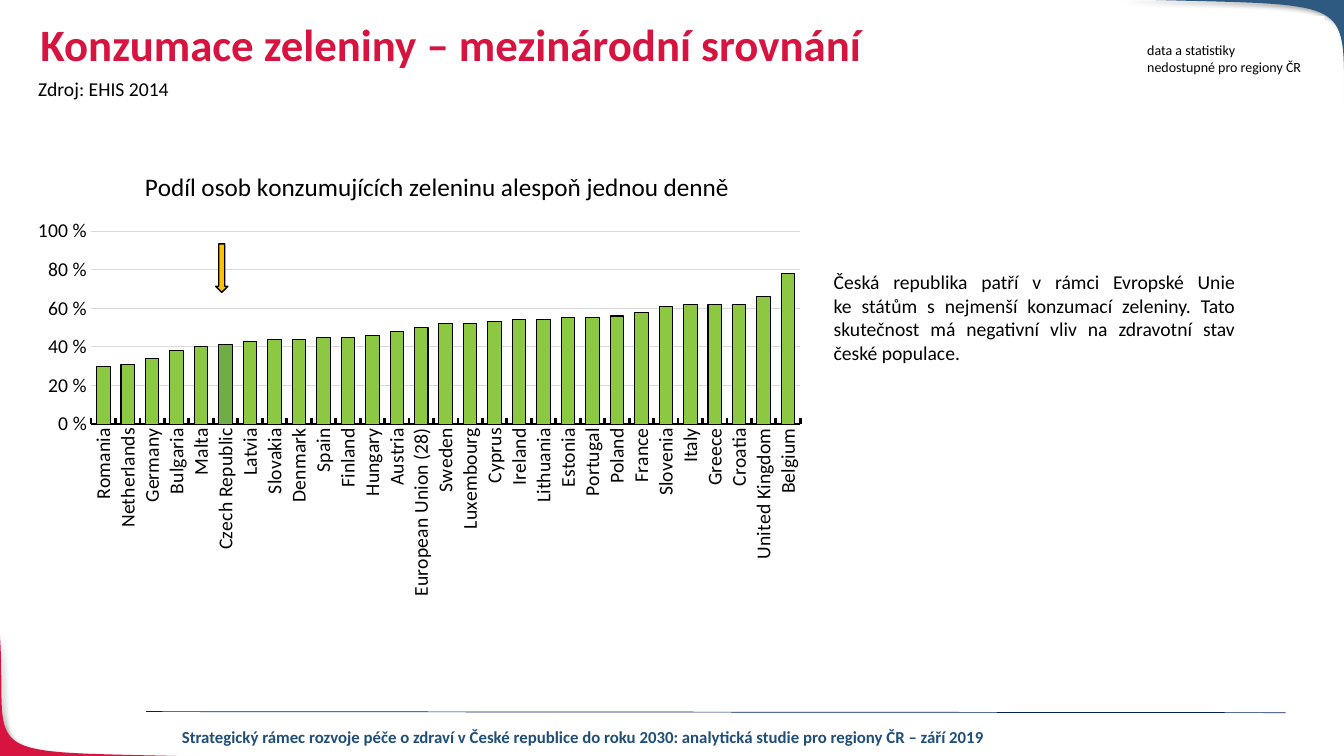
"""Build the slide comparing vegetable consumption across European countries."""
from lxml import etree
from pptx import Presentation
from pptx.chart import data as chart_data
from pptx.dml.color import RGBColor
from pptx.enum import chart as chart_enum, dml, shapes, text
from pptx.oxml import parse_xml
from pptx.oxml.ns import nsdecls, qn
from pptx.util import Inches, Pt

THEME = {
    "font": "Calibri",
    "red": RGBColor.from_string("D71440"),
    "blue": RGBColor.from_string("2E5980"),
    "footer": RGBColor.from_string("1F4E79"),
    "navy": RGBColor.from_string("002060"),
    "black": RGBColor.from_string("000000"),
    "white": RGBColor.from_string("FFFFFF"),
    "grid": RGBColor.from_string("D9D9D9"),
    "bar": RGBColor.from_string("8CC841"),
    "czech_bar": RGBColor.from_string("70AD47"),
    "arrow": RGBColor.from_string("FFC000"),
    "title_size": Pt(32), "chart_title_size": Pt(18), "body_size": Pt(14),
    "footer_size": Pt(12), "note_size": Pt(10),
}

presentation = Presentation()
presentation.slide_width, presentation.slide_height = Inches(13.33), Inches(7.5)
slide = presentation.slides.add_slide(presentation.slide_layouts[5])


def share(*percents):
    """Turn alternating percentages of slide width and height into lengths."""
    sides = (presentation.slide_width, presentation.slide_height)
    return [int(sides[index % 2] * percent / 100) for index, percent in enumerate(percents)]


def write(shape, content, size, color="black", bold=False, alignment=text.PP_ALIGN.LEFT, wrap=True):
    """Put formatted paragraphs into a shape."""
    frame = shape.text_frame
    frame.text = content
    frame.word_wrap = wrap
    frame.vertical_anchor = text.MSO_ANCHOR.TOP
    for paragraph in frame.paragraphs:
        paragraph.alignment = alignment
        paragraph.font.color.rgb = THEME[color]
        for name, value in {"name": THEME["font"], "size": THEME[size], "bold": bold}.items():
            setattr(paragraph.font, name, value)


corners = [
    ("red", [(15.98, 100.13), (-2.55, 99.2), (0.6, 101.2), (0, 84)], (-0.08, 100.13)),
    ("blue", [(83.35, -0.13), (102.78, 0.93), (99.47, -1.33), (100.15, 18.93)], (100.15, -0.13)),
]
STEPS = 40
for color, controls, corner in corners:
    curve = []
    for step in range(STEPS + 1):
        t = step / STEPS
        weights = ((1 - t) ** 3, 3 * t * (1 - t) ** 2, 3 * t ** 2 * (1 - t), t ** 3)
        curve.append(share(*(sum(w * point[axis] for w, point in zip(weights, controls))
                             for axis in (0, 1))))
    builder = slide.shapes.build_freeform(*curve[0])
    builder.add_line_segments(curve[1:] + [share(*corner)], close=True)
    shape = builder.convert_to_shape()
    shape.fill.solid()
    shape.fill.fore_color.rgb = THEME[color]
    shape.line.fill.background()
    shape.element.spPr.append(parse_xml(
        f'<a:effectLst {nsdecls("a")}><a:outerShdw blurRad="50800" dist="38100" dir="2700000">'
        '<a:srgbClr val="000000"><a:alpha val="40000"/></a:srgbClr></a:outerShdw></a:effectLst>'))

rule = slide.shapes.add_connector(shapes.MSO_CONNECTOR.STRAIGHT, *share(10.88, 94.13, 95.65, 94.27))
rule.line.color.rgb = THEME["navy"]
rule.line.width = Pt(0.5)
etree.SubElement(rule.element.spPr, qn("a:effectLst"))

title = slide.shapes.title
title.left, title.top, title.width, title.height = share(2.25, 2.4, 86.27, 9.2)
write(title, "Konzumace zeleniny – mezinárodní srovnání", "title_size", "red", bold=True)
title.text_frame.paragraphs[0].line_spacing = 0.9

text_boxes = [
    ((11.78, 95.47, 63.24, 4),
     "Strategický rámec rozvoje péče o zdraví v České republice do roku 2030: "
     "analytická studie pro regiony ČR – září 2019",
     {"size": "footer_size", "color": "footer", "bold": True, "alignment": text.PP_ALIGN.CENTER}),
    ((2.1, 9.47, 11.33, 4.53), "Zdroj: EHIS 2014", {"size": "body_size", "wrap": False}),
    ((61.29, 35.07, 31.36, 45.2),
     "Česká republika patří v rámci Evropské Unie\vke státům s nejmenší konzumací zeleniny. Tato\v"
     "skutečnost má negativní vliv na zdravotní stav české populace.",
     {"size": "body_size", "alignment": text.PP_ALIGN.JUSTIFY}),
]
for box, content, style in text_boxes:
    write(slide.shapes.add_textbox(*share(*box)), content, **style)

consumption = {
    "Romania": 30, "Netherlands": 31, "Germany": 34, "Bulgaria": 38, "Malta": 40,
    "Czech Republic": 41, "Latvia": 43, "Slovakia": 44, "Denmark": 44, "Spain": 45,
    "Finland": 45, "Hungary": 46, "Austria": 48, "European Union (28)": 50, "Sweden": 52,
    "Luxembourg": 52, "Cyprus": 53, "Ireland": 54, "Lithuania": 54, "Estonia": 55,
    "Portugal": 55, "Poland": 56, "France": 58, "Slovenia": 61, "Italy": 62, "Greece": 62,
    "Croatia": 62, "United Kingdom": 66, "Belgium": 78,
}
values = chart_data.CategoryChartData()
values.categories = list(consumption)
values.add_series("Series 1", list(consumption.values()))
chart = slide.shapes.add_chart(chart_enum.XL_CHART_TYPE.COLUMN_CLUSTERED,
                               *share(1.58, 19.33, 59.04, 60.8), values).chart
chart.has_legend = False
chart.font.name, chart.font.size = THEME["font"], THEME["body_size"]
chart.font.color.rgb = THEME["black"]
write(chart.chart_title, "Podíl osob konzumujících zeleninu alespoň jednou denně",
      "chart_title_size", alignment=text.PP_ALIGN.CENTER)
chart.chart_title.include_in_layout = False

plot = chart.plots[0]
for name, value in {"gap_width": 81, "overlap": -27, "vary_by_categories": False}.items():
    setattr(plot, name, value)
series = plot.series[0]
czech_point = series.points[list(consumption).index("Czech Republic")]
for bar, color in ((series, "bar"), (czech_point, "czech_bar")):
    bar.format.fill.solid()
    bar.format.fill.fore_color.rgb = THEME[color]
    bar.format.line.color.rgb = THEME["black"]
    bar.format.line.width = Pt(0.75)

tick_mark = chart_enum.XL_TICK_MARK
axis_formats = [
    (chart.value_axis, {"minimum_scale": 0, "maximum_scale": 100, "major_unit": 20,
                        "major_tick_mark": tick_mark.NONE, "has_major_gridlines": True}),
    (chart.category_axis, {"major_tick_mark": tick_mark.INSIDE, "has_major_gridlines": False}),
]
for axis, formats in axis_formats:
    for name, value in formats.items():
        setattr(axis, name, value)
    axis.tick_labels.font.size = THEME["body_size"]
labels = chart.value_axis.tick_labels
labels.number_format, labels.number_format_is_linked = '0" %"', False
chart.value_axis.format.line.fill.background()
for line, color, width in ((chart.value_axis.major_gridlines.format.line, "grid", 0.75),
                           (chart.category_axis.format.line, "black", 2)):
    line.color.rgb = THEME[color]
    line.width = Pt(width)
chart.category_axis._element.find(qn("c:txPr")).find(qn("a:bodyPr")).set("rot", "-5400000")

layouts = [
    (chart.chart_title._element, {"xMode": "edge", "yMode": "edge", "x": 0.15, "y": 0.04}),
    (plot._element.getparent(), {"layoutTarget": "inner", "xMode": "edge", "yMode": "edge",
                                 "x": 0.088, "y": 0.185, "w": 0.894, "h": 0.42}),
]
for element, settings in layouts:
    for old in element.findall(qn("c:layout")):
        element.remove(old)
    entries = "".join(f'<c:{name} val="{value}"/>' for name, value in settings.items())
    layout = parse_xml(f'<c:layout {nsdecls("c")}><c:manualLayout>{entries}</c:manualLayout></c:layout>')
    text_part = element.find(qn("c:tx"))
    element.insert(0 if text_part is None else 1, layout)

group = slide.shapes.add_group_shape()
arrow = slide.shapes.add_shape(shapes.MSO_SHAPE.DOWN_ARROW, *share(16.05, 32.27, 0.9, 6.4))
panel = group.shapes.add_shape(shapes.MSO_SHAPE.RECTANGLE, *share(82.52, 2.13, 16.05, 8.13))
for shape, color in ((arrow, "arrow"), (panel, "white")):
    shape.shadow.inherit = False
    shape.fill.solid()
    shape.fill.fore_color.rgb = THEME[color]
arrow.line.color.rgb = THEME["black"]
arrow.line.width = Pt(1)
panel.line.fill.background()
note = group.shapes.add_textbox(*share(84.62, 4.8, 15.38, 5.87))
write(note, "data a statistiky\nnedostupné pro regiony ČR", "note_size")

presentation.save("out.pptx")
